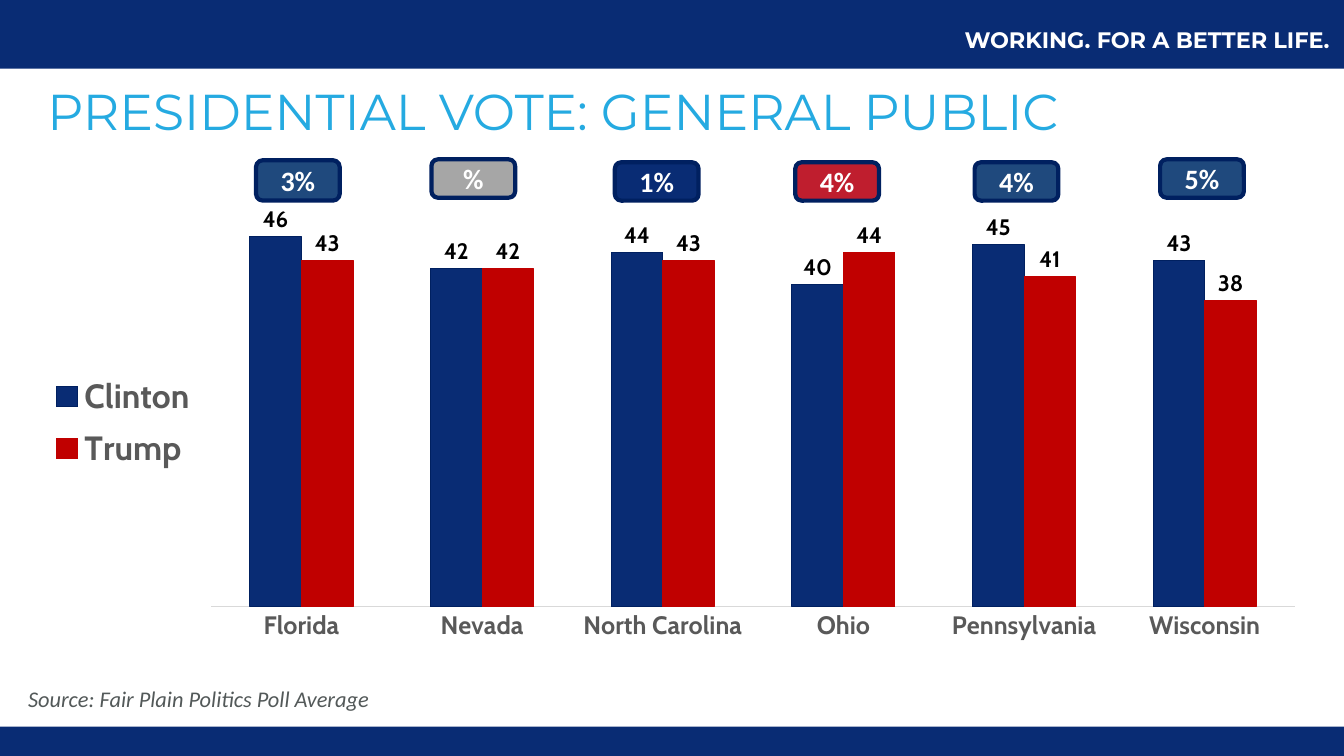
"""Build the slide comparing the presidential vote in six states."""
import pptx
import pptx.chart.data
import pptx.dml.color
import pptx.enum.chart
import pptx.enum.shapes
import pptx.enum.text
import pptx.oxml
import pptx.oxml.ns
import pptx.util

Pt = pptx.util.Pt
RGBColor = pptx.dml.color.RGBColor
SHAPES = pptx.enum.shapes.MSO_SHAPE
ALIGN = pptx.enum.text.PP_ALIGN
ANCHOR = pptx.enum.text.MSO_ANCHOR

NAVY = RGBColor(0x09, 0x2C, 0x74)
OUTLINE = RGBColor(0x00, 0x20, 0x60)
STEEL = RGBColor(0x1F, 0x49, 0x7D)
SILVER = RGBColor(0xA6, 0xA6, 0xA6)
CRIMSON = RGBColor(0xBF, 0x1E, 0x2E)
RED = RGBColor(0xC0, 0x00, 0x00)
SKY = RGBColor(0x25, 0xAA, 0xE1)
SLATE = RGBColor(0x53, 0x59, 0x59)
GRAY = RGBColor(0x59, 0x59, 0x59)
PALE = RGBColor(0xD9, 0xD9, 0xD9)
WHITE = RGBColor(0xFF, 0xFF, 0xFF)
BLACK = RGBColor(0x00, 0x00, 0x00)

WIDTH, HEIGHT = 960, 540
SLOGAN = "WORKING. FOR A BETTER LIFE."
TITLE = "PRESIDENTIAL VOTE: GENERAL PUBLIC"
SOURCE = "Source: Fair Plain Politics Poll Average"
BANDS = [(0, 49), (519, 21)]
STATES = ["Florida", "Nevada", "North Carolina", "Ohio", "Pennsylvania", "Wisconsin"]
CANDIDATES = [
    ("Clinton", (46, 42, 44, 40, 45, 43), NAVY, OUTLINE),
    ("Trump", (43, 42, 43, 44, 41, 38), RED, None),
]
MARGINS = [
    ("3%", STEEL, 182.9, 114.5, 28.8),
    ("%", SILVER, 308.2, 113.8, 27.4),
    ("1%", NAVY, 439.2, 115.9, 27.4),
    ("4%", CRIMSON, 568.1, 115.9, 27.4),
    ("4%", STEEL, 696.2, 115.9, 27.4),
    ("5%", STEEL, 828.7, 113.8, 27.4),
]
MARGIN_WIDTH = 59.8


def style(font, name, size, color, bold=False, italic=False):
    font.name, font.size = name, Pt(size)
    font.bold, font.italic = bold, italic
    font.color.rgb = color


def add_block(slide, kind, box, fill):
    block = slide.shapes.add_shape(kind, *map(Pt, box))
    block.shadow.inherit = False
    block.fill.solid()
    block.fill.fore_color.rgb = fill
    block.line.fill.background()
    return block


def add_text(slide, text, box, align, *look):
    label = slide.shapes.add_textbox(*map(Pt, box))
    label.text_frame.word_wrap = True
    line = label.text_frame.paragraphs[0]
    line.text, line.alignment = text, align
    style(line.runs[0].font, *look)


def place(part, index, x, y, w, h, inner=False):
    for old in part.findall(pptx.oxml.ns.qn("c:layout")):
        part.remove(old)
    target = '<c:layoutTarget val="inner"/>' if inner else ""
    part.insert(index, pptx.oxml.parse_xml(
        f'<c:layout {pptx.oxml.ns.nsdecls("c")}><c:manualLayout>{target}'
        '<c:xMode val="edge"/><c:yMode val="edge"/>'
        f'<c:x val="{x}"/><c:y val="{y}"/><c:w val="{w}"/><c:h val="{h}"/>'
        '</c:manualLayout></c:layout>'))


def add_vote_chart(slide):
    votes = pptx.chart.data.CategoryChartData()
    votes.categories = STATES
    for name, shares, _, _ in CANDIDATES:
        votes.add_series(name, shares)
    chart = slide.shapes.add_chart(
        pptx.enum.chart.XL_CHART_TYPE.COLUMN_CLUSTERED,
        Pt(13), Pt(113.8), Pt(937.4), Pt(368.6), votes).chart
    style(chart.font, "Cabin", 10, BLACK)
    chart.has_title = False

    plot = chart.plots[0]
    plot.gap_width, plot.overlap = 150, 0
    plot.vary_by_categories = False
    for series, (_, _, color, border) in zip(plot.series, CANDIDATES):
        series.format.fill.solid()
        series.format.fill.fore_color.rgb = color
        series.format.line.color.rgb = border or color
        series.format.line.width = Pt(0.75)
        labels = series.data_labels
        labels.show_value = True
        labels.position = pptx.enum.chart.XL_LABEL_POSITION.OUTSIDE_END
        style(labels.font, "Cabin", 16, BLACK, True)

    shares = chart.value_axis
    shares.minimum_scale, shares.maximum_scale = 0, 50
    shares.has_major_gridlines = False
    shares.visible = False
    states = chart.category_axis
    states.major_tick_mark = pptx.enum.chart.XL_TICK_MARK.NONE
    states.format.line.color.rgb = PALE
    states.format.line.width = Pt(0.75)
    style(states.tick_labels.font, "Cabin", 18, GRAY, True)

    chart.has_legend = True
    legend = chart.legend
    legend.position = pptx.enum.chart.XL_LEGEND_POSITION.LEFT
    legend.include_in_layout = False
    style(legend.font, "Cabin", 24, GRAY, True)
    area = chart.element.find(".//" + pptx.oxml.ns.qn("c:plotArea"))
    place(area, 0, 0.147, 0.087, 0.826, 0.78, inner=True)
    place(chart.element.find(".//" + pptx.oxml.ns.qn("c:legend")), 1, 0.02, 0.4, 0.12, 0.22)


def main():
    deck = pptx.Presentation()
    deck.slide_width, deck.slide_height = Pt(WIDTH), Pt(HEIGHT)
    slide = deck.slides.add_slide(deck.slide_layouts[5])

    for top, height in BANDS:
        add_block(slide, SHAPES.RECTANGLE, (0, top, WIDTH, height), NAVY)
    add_text(slide, SLOGAN, (620, 15, 399, 27), ALIGN.CENTER, "Montserrat", 16, WHITE, True)

    title = slide.shapes.title
    title.left, title.top, title.width, title.height = map(Pt, (26.6, 46.8, 831.6, 69.1))
    title.text_frame.text = TITLE
    title.text_frame.auto_size = pptx.enum.text.MSO_AUTO_SIZE.NONE
    title.text_frame.vertical_anchor = ANCHOR.MIDDLE
    heading = title.text_frame.paragraphs[0]
    heading.alignment, heading.line_spacing = ALIGN.LEFT, 0.9
    style(heading.runs[0].font, "Montserrat", 36, SKY)

    add_text(slide, SOURCE, (13, 486, 308, 27), ALIGN.LEFT, "Calibri", 16, SLATE, False, True)
    add_vote_chart(slide)

    for lead, fill, left, top, height in MARGINS:
        badge = add_block(slide, SHAPES.ROUNDED_RECTANGLE, (left, top, MARGIN_WIDTH, height), fill)
        badge.line.color.rgb = OUTLINE
        badge.line.width = Pt(3)
        badge.text_frame.text = lead
        badge.text_frame.vertical_anchor = ANCHOR.MIDDLE
        line = badge.text_frame.paragraphs[0]
        line.alignment = ALIGN.CENTER
        style(line.runs[0].font, "Calibri", 20, WHITE, True)

    deck.save("out.pptx")


if __name__ == "__main__":
    main()
